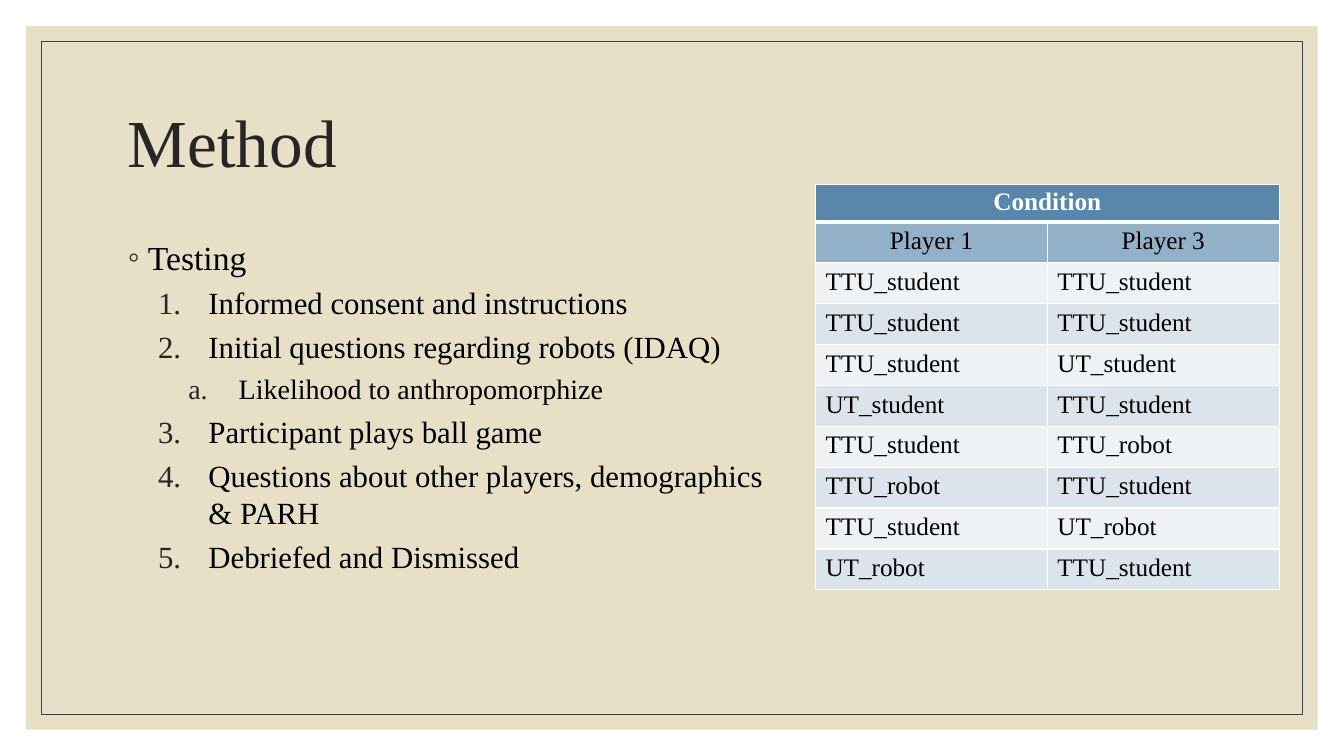
from pptx import Presentation
from pptx.dml.color import RGBColor
from pptx.enum import shapes, text
from pptx.oxml import ns
from pptx.util import Pt
from lxml import etree

theme = {
    "font": "Times New Roman",
    "panel": "E7E0C7", "frame": "404040", "dark": "262626",
    "black": "000000", "white": "FFFFFF",
    "head": "5986AB", "sub": "92B0C8", "bands": ["EEF2F5", "DCE4EB"],
    "title": 48, "levels": [24, 22, 20], "cell": 18,
}


def style(para, words, size, color, **form):
    run = para.add_run()
    run.text = words
    form = {"name": theme["font"], "size": Pt(size), **form}
    for key, value in form.items():
        setattr(run.font, key, value)
    run.font.color.rgb = RGBColor.from_string(color)


def node(parent, tag, **attrs):
    item = etree.SubElement(parent, ns.qn("a:" + tag))
    for key, value in attrs.items():
        item.set(key, str(value))
    return item


deck = Presentation()
deck.slide_width, deck.slide_height = Pt(960), Pt(540)
slide = deck.slides.add_slide(deck.slide_layouts[6])

for inset, fill, edge in [(18.72, theme["panel"], None), (29.52, None, theme["frame"])]:
    box = slide.shapes.add_shape(
        shapes.MSO_SHAPE.RECTANGLE, Pt(inset), Pt(inset),
        Pt(960 - 2 * inset), Pt(540 - 2 * inset))
    box.shadow.inherit = False
    if fill:
        box.fill.solid()
        box.fill.fore_color.rgb = RGBColor.from_string(fill)
        box.line.fill.background()
    else:
        box.fill.background()
        box.line.color.rgb = RGBColor.from_string(edge)
        box.line.width = Pt(0.5)

title = slide.shapes.add_textbox(Pt(84.24), Pt(50.4), Pt(792), Pt(108)).text_frame
title.word_wrap = True
title.vertical_anchor = text.MSO_ANCHOR.MIDDLE
title.paragraphs[0].line_spacing = 0.9
style(title.paragraphs[0], "Method", theme["title"], theme["dark"])

steps = [
    (0, "Testing"),
    (1, "Informed consent and instructions"),
    (1, "Initial questions regarding robots (IDAQ)"),
    (2, "Likelihood to anthropomorphize"),
    (1, "Participant plays ball game"),
    (1, "Questions about other players, demographics & PARH"),
    (1, "Debriefed and Dismissed"),
]
marks = [
    (14.4, 14.4, 9, "buChar", {"char": "◦"}),
    (57.6, 36, 5, "buAutoNum", {"type": "arabicPeriod"}),
    (79.2, 36, 5, "buAutoNum", {"type": "alphaLcPeriod"}),
]
body = slide.shapes.add_textbox(Pt(84.24), Pt(165.6), Pt(487.44), Pt(309.6)).text_frame
body.word_wrap = True
for index, (level, words) in enumerate(steps):
    para = body.add_paragraph() if index else body.paragraphs[0]
    left, hang, before, kind, attrs = marks[level]
    para.level = level
    para.line_spacing = 1.0
    para.space_before = Pt(before)
    style(para, words, theme["levels"][level], theme["black"])
    props = para._p.get_or_add_pPr()
    props.set("marL", str(Pt(left)))
    props.set("indent", str(-Pt(hang)))
    node(node(props, "buClr"), "srgbClr", val=theme["dark"])
    node(props, "buFont", typeface=theme["font"])
    node(props, kind, **attrs)

rows = [
    ("Condition", ""),
    ("Player 1", "Player 3"),
    ("TTU_student", "TTU_student"),
    ("TTU_student", "TTU_student"),
    ("TTU_student", "UT_student"),
    ("UT_student", "TTU_student"),
    ("TTU_student", "TTU_robot"),
    ("TTU_robot", "TTU_student"),
    ("TTU_student", "UT_robot"),
    ("UT_robot", "TTU_student"),
]
grid = slide.shapes.add_table(
    len(rows), 2, Pt(582.48), Pt(131.76), Pt(331.2), Pt(290)).table
for col in grid.columns:
    col.width = Pt(165.6)
for r, row in enumerate(rows):
    grid.rows[r].height = Pt(29.2 if r else 21)
    fill = [theme["head"], theme["sub"]][r] if r < 2 else theme["bands"][r % 2]
    for c, words in enumerate(row):
        cell = grid.cell(r, c)
        if r == 0:
            cell.margin_top = cell.margin_bottom = Pt(2.6)
        props = cell._tc.get_or_add_tcPr()
        for side in ["lnL", "lnR", "lnT", "lnB"]:
            thick = (r, side) in [(0, "lnB"), (1, "lnT")]
            line = node(props, side, w=Pt(3 if thick else 1))
            node(node(line, "solidFill"), "srgbClr", val=theme["white"])
        cell.fill.solid()
        cell.fill.fore_color.rgb = RGBColor.from_string(fill)
        para = cell.text_frame.paragraphs[0]
        para.font.size = Pt(theme["cell"])
        if words:
            para.alignment = text.PP_ALIGN.CENTER if r < 2 else text.PP_ALIGN.LEFT
            ink = theme["black"] if r else theme["white"]
            style(para, words, theme["cell"], ink, bold=r == 0)
grid.cell(0, 0).merge(grid.cell(0, 1))

deck.save("out.pptx")
